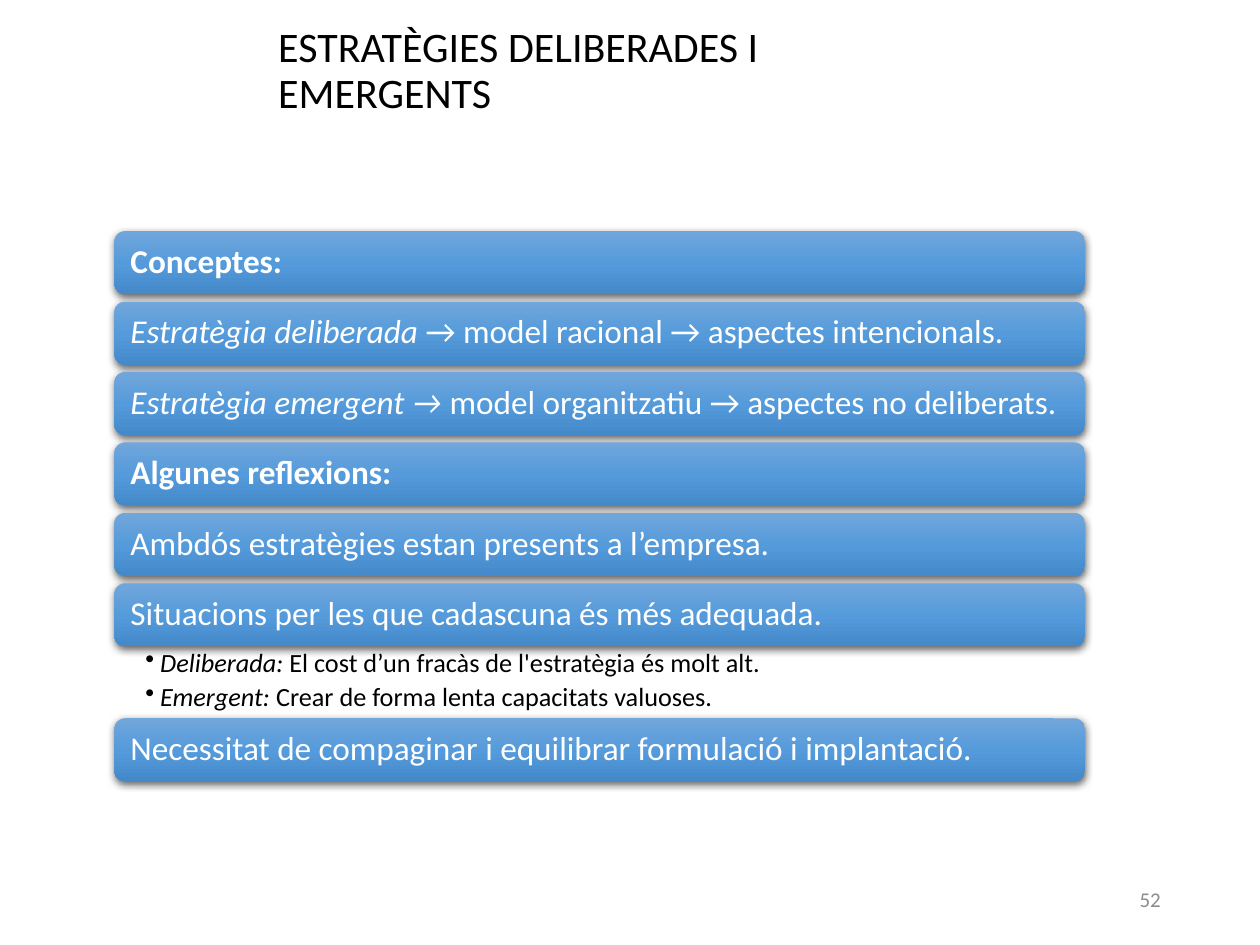
from copy import deepcopy
from dataclasses import dataclass
from lxml import etree
from pptx import Presentation
from pptx import util as u
from pptx.dml.color import RGBColor
from pptx.enum import shapes, text
from pptx.oxml.ns import qn

FONT = "Calibri"
HUES = {
    "top": "71A6DB", "mid": "559BDB", "base": "448ACA",
    "ink": "000000", "pale": "FFFFFF", "gray": "8C8C8C",
}
LEFT, WIDTH, HIGH, PITCH = 2.31, 19.56, 1.27, 1.42
START, LIST = 4.66, 1.45


@dataclass(frozen=True)
class Bit:
    words: str
    bold: bool = False
    slant: bool = False


@dataclass(frozen=True)
class Bar:
    top: float
    bits: tuple[Bit, ...]


def hue(name: str) -> RGBColor:
    return RGBColor.from_string(HUES[name])


def write(para, bits: tuple[Bit, ...], size: float, tint: str) -> None:
    para.line_spacing = 0.9
    for bit in bits:
        run = para.add_run()
        run.text = bit.words
        font = run.font
        font.name, font.size = FONT, u.Pt(size)
        font.bold, font.italic = bit.bold, bit.slant
        font.color.rgb = hue(tint)


def inset(frame, left: float, top: float, right: float, base: float) -> None:
    frame.word_wrap = True
    frame.margin_left, frame.margin_top = u.Cm(left), u.Cm(top)
    frame.margin_right, frame.margin_bottom = u.Cm(right), u.Cm(base)


def shade(shape) -> None:
    shape.fill.gradient()
    shape.fill.gradient_angle = 270
    first = shape._element.spPr.find(".//" + qn("a:gs"))
    first.addnext(deepcopy(first))
    stops = shape.fill.gradient_stops
    for stop, name, place in zip(stops, ("top", "mid", "base"), (0, 0.5, 1)):
        stop.color.rgb = hue(name)
        stop.position = place


def cast(shape) -> None:
    shape.shadow.inherit = False
    pool = shape._element.spPr.find(qn("a:effectLst"))
    glow = etree.SubElement(
        pool, qn("a:outerShdw"), blurRad=str(u.Pt(4.5)), dist=str(u.Pt(1.5)),
        dir="5400000", algn="ctr", rotWithShape="0")
    tone = etree.SubElement(glow, qn("a:srgbClr"), val=HUES["ink"])
    etree.SubElement(tone, qn("a:alpha"), val="63000")


def draw_bar(group, bar: Bar) -> None:
    shape = group.shapes.add_shape(
        shapes.MSO_SHAPE.ROUNDED_RECTANGLE,
        u.Cm(LEFT), u.Cm(bar.top), u.Cm(WIDTH), u.Cm(HIGH))
    shade(shape)
    shape.line.fill.background()
    cast(shape)
    frame = shape.text_frame
    inset(frame, 0.26, 0.2, 0.26, 0.2)
    frame.vertical_anchor = text.MSO_ANCHOR.MIDDLE
    para = frame.paragraphs[0]
    para.alignment = text.PP_ALIGN.LEFT
    write(para, bar.bits, 19, "pale")


def draw_list(group, top: float, items: tuple[tuple[Bit, ...], ...]) -> None:
    box = group.shapes.add_textbox(u.Cm(LEFT), u.Cm(top), u.Cm(WIDTH), u.Cm(LIST))
    frame = box.text_frame
    inset(frame, 0.62, 0.07, 0.38, 0.07)
    for index, bits in enumerate(items):
        para = frame.add_paragraph() if index else frame.paragraphs[0]
        para.level = 1
        props = para._p.get_or_add_pPr()
        props.set("marL", str(u.Cm(0.3)))
        props.set("indent", str(-u.Cm(0.3)))
        etree.SubElement(props, qn("a:buChar"), char="•")
        para.space_after = u.Pt(3)
        write(para, bits, 15, "ink")


def draw_note(slide, words: str, place: tuple[float, ...], size: float,
              tint: str, anchor: text.MSO_ANCHOR, align: text.PP_ALIGN) -> None:
    box = slide.shapes.add_textbox(*map(u.Cm, place))
    frame = box.text_frame
    frame.word_wrap = True
    frame.vertical_anchor = anchor
    para = frame.paragraphs[0]
    para.alignment = align
    write(para, (Bit(words),), size, tint)


ROWS = (
    (Bit("Conceptes:", bold=True),),
    (Bit("Estratègia deliberada ", slant=True),
     Bit("→ model racional → aspectes intencionals.")),
    (Bit("Estratègia emergent → ", slant=True),
     Bit("model organitzatiu → aspectes no deliberats.")),
    (Bit("Algunes reflexions:", bold=True),),
    (Bit("Ambdós estratègies estan presents a l’empresa."),),
    (Bit("Situacions per les que cadascuna és més adequada."),),
)
CASES = (
    (Bit("Deliberada:", slant=True),
     Bit(" El cost d’un fracàs de l'estratègia és molt alt.")),
    (Bit("Emergent:", slant=True),
     Bit(" Crear de forma lenta capacitats valuoses.")),
)
CLOSE = (Bit("Necessitat de compaginar i equilibrar formulació i implantació."),)


def main() -> None:
    deck = Presentation()
    deck.slide_width, deck.slide_height = u.Cm(25.4), u.Cm(19.05)
    slide = deck.slides.add_slide(deck.slide_layouts[6])
    draw_note(slide, "ESTRATÈGIES DELIBERADES I EMERGENTS", (5.36, 0.23, 12.55, 2.26),
              24, "ink", text.MSO_ANCHOR.BOTTOM, text.PP_ALIGN.LEFT)
    draw_note(slide, "52", (17.93, 17.65, 5.72, 1.02),
              12, "gray", text.MSO_ANCHOR.MIDDLE, text.PP_ALIGN.RIGHT)
    group = slide.shapes.add_group_shape()
    for index, bits in enumerate(ROWS):
        draw_bar(group, Bar(START + index * PITCH, bits))
    below = START + (len(ROWS) - 1) * PITCH + HIGH
    draw_list(group, below, CASES)
    draw_bar(group, Bar(below + LIST, CLOSE))
    deck.save("out.pptx")


if __name__ == "__main__":
    main()
